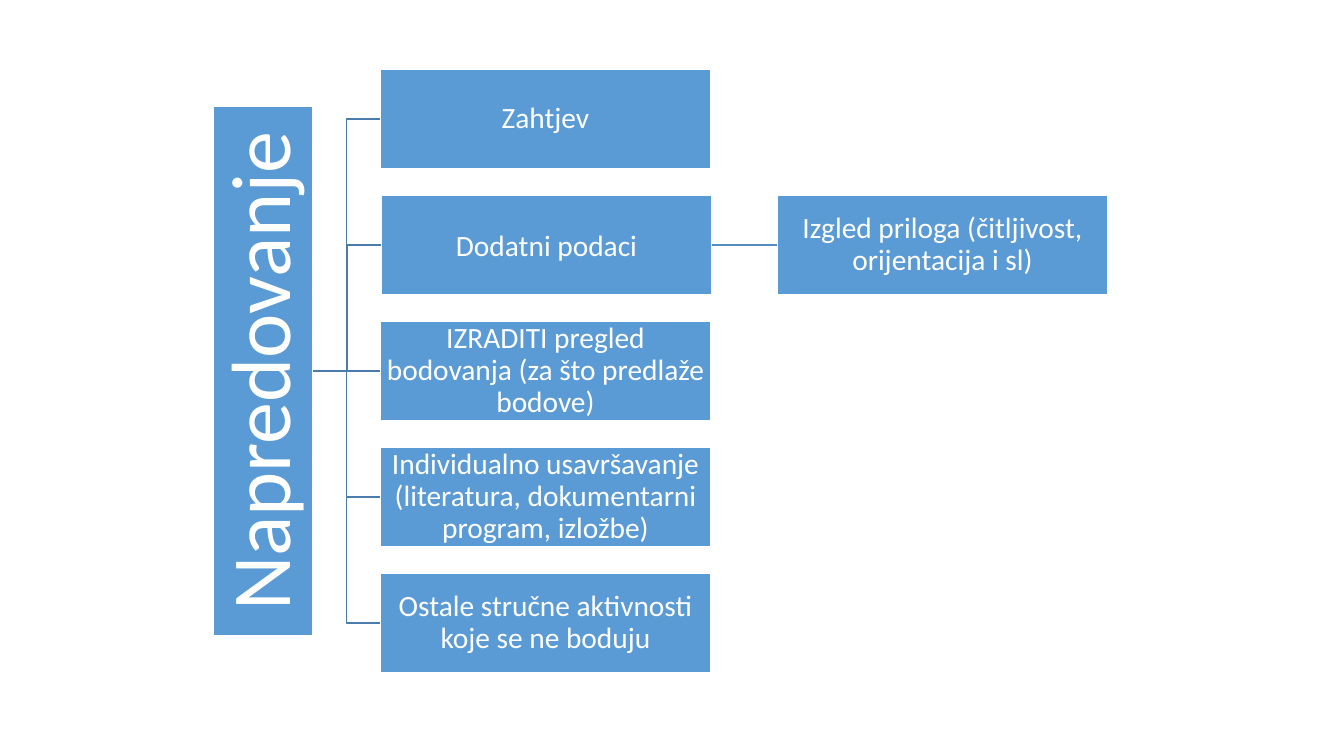
from lxml.etree import SubElement
from pptx import Presentation
from pptx.dml.color import RGBColor
from pptx.enum.shapes import MSO_CONNECTOR, MSO_SHAPE
from pptx.enum.text import MSO_ANCHOR, PP_ALIGN
from pptx.oxml.ns import qn
from pptx.util import Emu, Pt

PX = 914400 / 100.8
BLUE = RGBColor(0x5B, 0x9B, 0xD5)
BRANCH_BLUE = RGBColor(0x49, 0x7C, 0xAB)
LEAF_BLUE = RGBColor(0x53, 0x8D, 0xC1)
WHITE = RGBColor(0xFF, 0xFF, 0xFF)

TOPICS = [
    "Zahtjev",
    "Dodatni podaci",
    "IZRADITI pregled bodovanja (za što predlaže bodove)",
    "Individualno usavršavanje (literatura, dokumentarni program, izložbe)",
    "Ostale stručne aktivnosti koje se ne boduju",
]
DETAIL = "Izgled priloga (čitljivost, orijentacija i sl)"
DETAILED_TOPIC = 1
BOX_WIDTH, BOX_HEIGHT, PITCH = 331, 100, 126
TOPIC_LEFT, DETAIL_LEFT, FIRST_TOP = 380, 777, 69
ROOT_LENGTH, ROOT_CENTER_X = 530, 263
CENTER_Y = FIRST_TOP + 2 * PITCH + BOX_HEIGHT // 2
TOP, LEFT, BOTTOM, RIGHT = range(4)


def px(length):
    return Emu(round(length * PX))


class HierarchyDiagram:
    font_name = "Calibri"
    line_width = Pt(1)

    def __init__(self, slide):
        self.slide = slide

    def box(self, text, left, top, width=BOX_WIDTH, size=21, inset=1, spacing=0.9):
        shape = self.slide.shapes.add_shape(
            MSO_SHAPE.RECTANGLE, px(left), px(top), px(width), px(BOX_HEIGHT))
        shape.shadow.inherit = False
        shape.fill.solid()
        shape.fill.fore_color.rgb = BLUE
        shape.line.color.rgb = WHITE
        shape.line.width = self.line_width
        frame = shape.text_frame
        frame.word_wrap = True
        frame.vertical_anchor = MSO_ANCHOR.MIDDLE
        frame.margin_left = frame.margin_right = px(inset)
        frame.margin_top = frame.margin_bottom = px(inset)
        frame.text = text
        paragraph = frame.paragraphs[0]
        paragraph.alignment = PP_ALIGN.CENTER
        paragraph.line_spacing = spacing
        font = paragraph.runs[0].font
        font.name = self.font_name
        font.size = Pt(size)
        font.color.rgb = WHITE
        return shape

    def link(self, kind, start, start_side, end, color):
        """Join a side of start to the left side of end."""
        connector = self.slide.shapes.add_connector(kind, 0, 0, 0, 0)
        connector.begin_connect(start, start_side)
        connector.end_connect(end, LEFT)
        connector.line.color.rgb = color
        connector.line.width = self.line_width
        SubElement(connector._element.spPr, qn("a:effectLst"))
        return connector


def main():
    presentation = Presentation()
    presentation.slide_width, presentation.slide_height = px(1344), px(756)
    slide = presentation.slides.add_slide(presentation.slide_layouts[6])
    diagram = HierarchyDiagram(slide)

    root = diagram.box("Napredovanje", ROOT_CENTER_X - ROOT_LENGTH // 2,
                       CENTER_Y - BOX_HEIGHT // 2, ROOT_LENGTH, size=60, inset=4)
    root.rotation = 270

    for index, text in enumerate(TOPICS):
        top = FIRST_TOP + index * PITCH
        detailed = index == DETAILED_TOPIC
        topic = diagram.box(text, TOPIC_LEFT + detailed, top,
                            spacing=1.0 if detailed else 0.9)
        level = top + BOX_HEIGHT // 2 == CENTER_Y
        kind = MSO_CONNECTOR.STRAIGHT if level else MSO_CONNECTOR.ELBOW
        # The root is turned, so its bottom side faces right.
        branch = diagram.link(kind, root, BOTTOM, topic, BRANCH_BLUE)
        branch.begin_x = px(ROOT_CENTER_X + BOX_HEIGHT // 2)
        branch.begin_y = px(CENTER_Y)
        if detailed:
            detail = diagram.box(DETAIL, DETAIL_LEFT, top)
            diagram.link(MSO_CONNECTOR.STRAIGHT, topic, RIGHT, detail, LEAF_BLUE)

    presentation.save("out.pptx")


if __name__ == "__main__":
    main()
